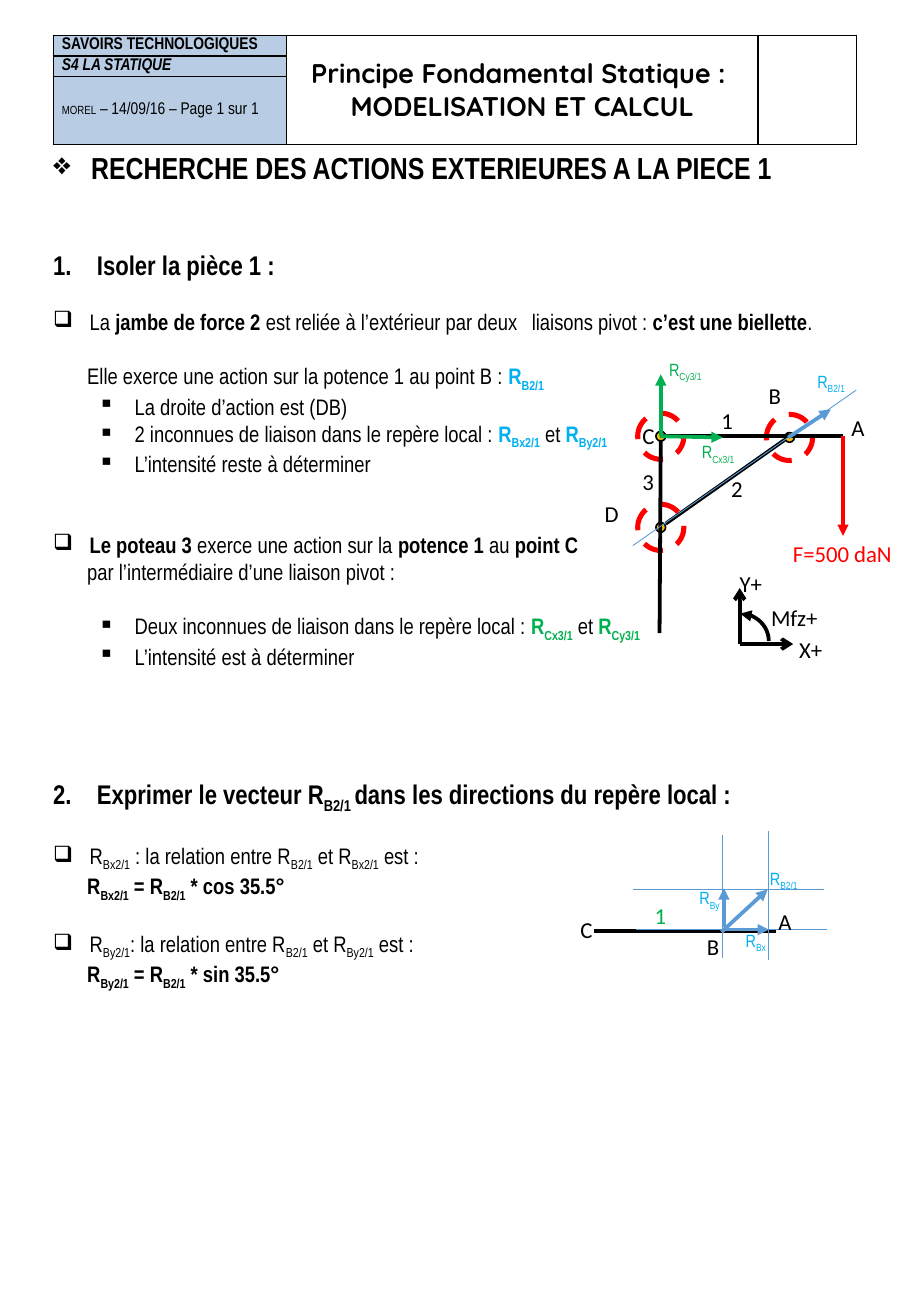
"""Build the statics worksheet on the external actions applied to part 1."""
from lxml import etree
from pptx import Presentation
from pptx.dml.color import RGBColor
from pptx.enum.dml import MSO_LINE
from pptx.enum.shapes import MSO_CONNECTOR, MSO_SHAPE
from pptx.enum.text import MSO_ANCHOR, PP_ALIGN
from pptx.oxml.ns import qn
from pptx.util import Inches, Pt

STRAIGHT = MSO_CONNECTOR.STRAIGHT
OVAL, ARC = MSO_SHAPE.OVAL, MSO_SHAPE.ARC
MIDDLE, TOP = MSO_ANCHOR.MIDDLE, MSO_ANCHOR.TOP
LEFT, CENTER = PP_ALIGN.LEFT, PP_ALIGN.CENTER
DASH = MSO_LINE.DASH
COLORS = {name: RGBColor.from_string(value) for name, value in {
    "black": "000000", "header": "B8CCE4", "sky": "00B0F0", "green": "00B050",
    "red": "FF0000", "steel": "5B9BD5", "gold": "FFC000"}.items()}
NARROW, CALIBRI, QUICKSAND = "Arial Narrow", "Calibri", "Quicksand"


def add_runs(paragraph, text, font, size, bold=False, color="black"):
    """Add text in which underscores open and close a subscript."""
    for index, piece in enumerate(text.split("_")):
        if piece:
            run = paragraph.add_run()
            run.text = piece
            run.font.name, run.font.size, run.font.bold = font, Pt(size), bold
            run.font.color.rgb = COLORS[color]
            if index % 2:
                run.font._element.set("baseline", "-25000")


def set_bullet(paragraph, mark, indent, hanging, tab_stops=()):
    """Set the indents, the bullet or start number, and the tab stops."""
    properties = paragraph._p.get_or_add_pPr()
    properties.set("marL", str(Inches(indent)))
    properties.set("indent", str(Inches(-hanging)))
    if isinstance(mark, int):
        etree.SubElement(properties, qn("a:buAutoNum"), type="arabicPeriod", startAt=str(mark))
    elif mark:
        etree.SubElement(properties, qn("a:buChar"), char=mark)
    else:
        etree.SubElement(properties, qn("a:buNone"))
    if tab_stops:
        tab_list = etree.SubElement(properties, qn("a:tabLst"))
        for stop in tab_stops:
            etree.SubElement(tab_list, qn("a:tab"), pos=str(Inches(stop)), algn="l")


presentation = Presentation()
presentation.slide_width, presentation.slide_height = Inches(7.5), Inches(10.83)
slide = presentation.slides.add_slide(presentation.slide_layouts[5])
shapes = slide.shapes

title = shapes.title
title.left, title.top, title.width, title.height = Inches(0.34), Inches(1.23), Inches(6.76), Inches(0.32)
title_frame = title.text_frame
title_frame.margin_top = title_frame.margin_bottom = 0
title_frame.vertical_anchor = TOP
title_paragraph = title_frame.paragraphs[0]
title_paragraph.alignment = LEFT
set_bullet(title_paragraph, "❖", 0.31, 0.31)
add_runs(title_paragraph, "RECHERCHE DES ACTIONS EXTERIEURES A LA PIECE 1", NARROW, 18, True)

table = shapes.add_table(3, 3, Inches(0.44), Inches(0.29), Inches(6.61), Inches(0.9)).table
for column, width in zip(table.columns, (1.92, 3.88, 0.81)):
    column.width = Inches(width)
for row, height in zip(table.rows, (0.17, 0.17, 0.56)):
    row.height = Inches(height)
for column_index in (1, 2):
    table.cell(0, column_index).merge(table.cell(2, column_index))
header_texts = {
    (0, 0): [[("SAVOIRS TECHNOLOGIQUES", NARROW, 10, True)]],
    (1, 0): [[("S4 LA STATIQUE", NARROW, 10, True)]],
    (2, 0): [[("MOREL", NARROW, 7), (" – 14/09/16 – Page 1 sur 1", NARROW, 10)]],
    (0, 1): [[("Principe Fondamental Statique : ", QUICKSAND, 16, True)],
             [("MODELISATION ET CALCUL", QUICKSAND, 16, True)]],
}
for row_index in range(3):
    for column_index in range(3):
        cell = table.cell(row_index, column_index)
        cell.margin_left = cell.margin_right = Inches(0.07)
        cell.margin_top = cell.margin_bottom = 0
        cell.vertical_anchor = MIDDLE
        for side in ("lnL", "lnR", "lnT", "lnB"):
            border = etree.SubElement(cell._tc.get_or_add_tcPr(), qn(f"a:{side}"), w=str(Pt(1)))
            fill = etree.SubElement(border, qn("a:solidFill"))
            etree.SubElement(fill, qn("a:srgbClr"), val=str(COLORS["black"]))
        if column_index == 0:
            cell.fill.solid()
            cell.fill.fore_color.rgb = COLORS["header"]
        else:
            cell.fill.background()
        for index, runs in enumerate(header_texts.get((row_index, column_index), [])):
            paragraph = cell.text_frame.add_paragraph() if index else cell.text_frame.paragraphs[0]
            paragraph.alignment = CENTER if column_index else LEFT
            for run in runs:
                add_runs(paragraph, *run)
table.cell(1, 0).text_frame.paragraphs[0].runs[0].font.italic = True

body = shapes.add_textbox(Inches(0.34), Inches(2), Inches(6.76), Inches(6.26)).text_frame
body.word_wrap = True
HEADING, BOX, SQUARE, PLAIN = (0.36, 0.36), ("❑", 0.3, 0.3), ("▪", 0.67, 0.3), (None, 0.28, 0)
lines = [
    ((1, *HEADING), 0, 16, [("Isoler la pièce 1 :", True)]),
    ((*BOX, (3.64, 3.94)), 16, 13.3, [
        ("La ",), ("jambe de force 2 ", True),
        ("est reliée à l’extérieur par deux \tliaisons pivot : ",),
        ("c’est une biellette", True), (". ",)]),
    (PLAIN, 16, 13.3, [("Elle exerce une action sur la potence 1 au point B : ",),
                       ("R_B2/1_", True, "sky")]),
    (SQUARE, 0, 13.3, [("La droite d’action est (DB)",)]),
    (SQUARE, 0, 13.3, [("2 inconnues de liaison dans le repère local : ",),
                       ("R_Bx2/1_", True, "sky"), (" et ",), ("R_By2/1_", True, "sky")]),
    (SQUARE, 0, 13.3, [("L’intensité reste à déterminer",)]),
    (BOX, 32, 13.3, [("Le poteau 3 ", True), ("exerce une action sur la ",),
                     ("potence 1", True), (" au ",), ("point C", True)]),
    (PLAIN, 0, 13.3, [("par l’intermédiaire d’une liaison pivot :",)]),
    (SQUARE, 16, 13.3, [("Deux inconnues de liaison dans le repère local : ",),
                        ("R_Cx3/1_", True, "green"), (" et ",), ("R_Cy3/1_", True, "green")]),
    (SQUARE, 0, 13.3, [("L’intensité est à déterminer",)]),
    ((2, *HEADING), 64, 16, [("Exprimer le vecteur R_B2/1 _dans les directions du repère local :", True)]),
]
for component, separator, ratio in (("Bx2/1", " : ", "cos"), ("By2/1", ": ", "sin")):
    lines += [
        (BOX, 16, 13.3, [(f"R_{component}_{separator}la relation entre R_B2/1_ et R_{component}_ est :",)]),
        (PLAIN, 0, 13.3, [(f"R_{component}_ = R_B2/1_ * {ratio} 35.5°", True)]),
    ]
for index, (bullet, space_before, size, runs) in enumerate(lines):
    paragraph = body.add_paragraph() if index else body.paragraphs[0]
    set_bullet(paragraph, *bullet)
    if space_before:
        paragraph.space_before = Pt(space_before)
    for text, *style in runs:
        add_runs(paragraph, text, NARROW, size, *style)

segments = [
    (5.43, 5.21, 5.44, 3.62, "black", 2.25, None),
    (5.44, 3.59, 6.94, 3.59, "black", 2.25, None),
    (6.46, 3.62, 5.48, 4.31, "black", 2.25, None),
    (6.94, 3.59, 6.94, 4.41, "red", 2.25, "triangle"),
    (5.21, 4.49, 7.05, 3.21, "steel", 0.5, None),
    (6.49, 3.6, 6.84, 3.37, "steel", 2.25, "triangle"),
    (5.44, 3.59, 5.44, 3.08, "green", 2.25, "triangle"),
    (5.43, 3.59, 5.95, 3.6, "green", 2.25, "triangle"),
    (6.09, 5.3, 6.09, 4.84, "black", 2.25, "arrow"),
    (6.09, 5.3, 6.53, 5.3, "black", 2.25, "arrow"),
    (4.89, 7.66, 6.39, 7.66, "black", 2.25, None),
    (5.94, 7.67, 6.32, 7.32, "steel", 2.25, "triangle"),
    (6.33, 6.84, 6.33, 7.9, "steel", 0.5, None),
    (6.78, 7.32, 5.21, 7.32, "steel", 0.5, None),
    (5.95, 6.87, 5.95, 7.88, "steel", 0.5, None),
    (6.81, 7.65, 5.24, 7.65, "steel", 0.5, None),
    (5.96, 7.63, 5.96, 7.31, "steel", 2.25, "triangle"),
    (5.97, 7.65, 6.33, 7.65, "steel", 2.25, "triangle"),
]
joints = [(5.44, 3.59), (6.5, 3.6), (5.44, 4.34)]
ovals = [(x, y, 0.08, "gold", "black", 1) for x, y in joints]
ovals += [(x, y, 0.38, None, "red", 3) for x, y in joints]
for x, y, diameter, fill_color, line_color, weight in ovals:
    oval = shapes.add_shape(OVAL, Inches(x - diameter / 2), Inches(y - diameter / 2),
                            Inches(diameter), Inches(diameter))
    oval.shadow.inherit = False
    oval.line.color.rgb, oval.line.width = COLORS[line_color], Pt(weight)
    if fill_color:
        oval.fill.solid()
        oval.fill.fore_color.rgb = COLORS[fill_color]
    else:
        oval.fill.background()
        oval.line.dash_style = DASH

for x1, y1, x2, y2, color, weight, arrowhead in segments:
    connector = shapes.add_connector(STRAIGHT, Inches(x1), Inches(y1), Inches(x2), Inches(y2))
    connector.line.color.rgb, connector.line.width = COLORS[color], Pt(weight)
    if arrowhead:
        etree.SubElement(connector.line._get_or_add_ln(), qn("a:tailEnd"), type=arrowhead)
    etree.SubElement(connector._element.spPr, qn("a:effectLst"))

moment_arc = shapes.add_shape(ARC, Inches(5.86), Inches(5.05), Inches(0.47), Inches(0.45))
moment_arc.shadow.inherit = False
moment_arc.fill.background()
moment_arc.line.color.rgb, moment_arc.line.width = COLORS["black"], Pt(2.25)
etree.SubElement(moment_arc.line._get_or_add_ln(), qn("a:headEnd"), type="triangle")

point_labels = [
    ("F=500 daN", 6.43, 4.39, "red"), ("1", 5.84, 3.3, "black"), ("2", 5.92, 3.86, "black"),
    ("3", 5.19, 3.8, "black"), ("B", 6.23, 3.09, "black"), ("A", 6.91, 3.36, "black"),
    ("C", 5.19, 3.42, "black"), ("D", 4.88, 4.06, "black"), ("X+", 6.48, 5.18, "black"),
    ("Y+", 5.99, 4.64, "black"), ("Mfz+", 6.25, 4.92, "black"), ("1", 5.29, 7.37, "green"),
    ("B", 5.72, 7.63, "black"), ("A", 6.31, 7.42, "black"), ("C", 4.68, 7.49, "black"),
]
force_labels = [
    ("R_B2/1_", 6.63, 3, "sky"), ("R_B2/1_", 6.24, 7.09, "sky"), ("R_By_", 5.66, 7.25, "sky"),
    ("R_Bx_", 6.04, 7.6, "sky"), ("R_Cy3/1_", 5.41, 2.9, "green"), ("R_Cx3/1_", 5.68, 3.58, "green"),
]
for labels, font, size, height in ((point_labels, CALIBRI, 13.5, 0.33), (force_labels, NARROW, 10.5, 0.28)):
    for text, left, top, color in labels:
        width = 1.06 if len(text) > 8 else 0.59
        frame = shapes.add_textbox(Inches(left), Inches(top), Inches(width), Inches(height)).text_frame
        frame.word_wrap = True
        frame.margin_right = 0
        add_runs(frame.paragraphs[0], text, font, size, False, color)

presentation.save("out.pptx")
